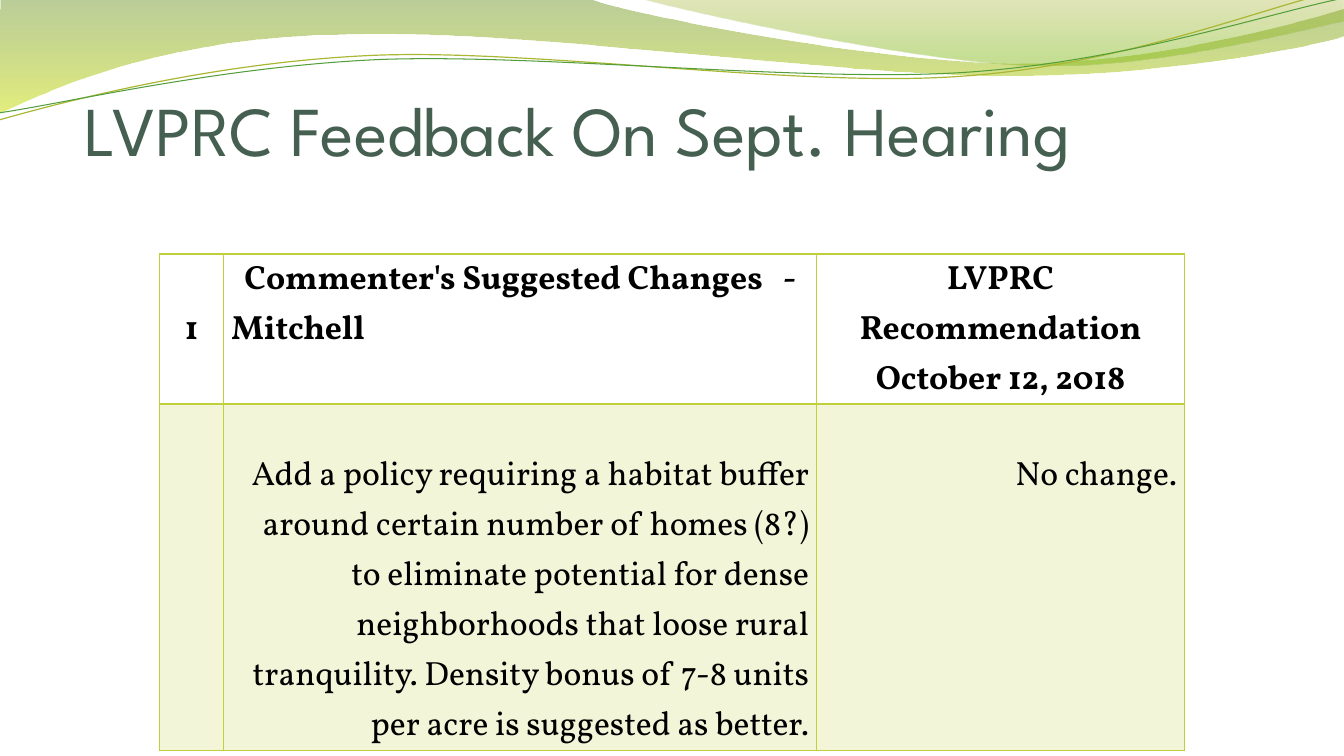
from lxml import etree
from pptx import Presentation
from pptx.dml.color import RGBColor
from pptx.enum.text import MSO_ANCHOR, MSO_AUTO_SIZE, PP_ALIGN
from pptx.oxml.ns import qn
from pptx.util import Pt

LEFT, CENTER, RIGHT = PP_ALIGN.LEFT, PP_ALIGN.CENTER, PP_ALIGN.RIGHT
TOP, MIDDLE, BOTTOM = MSO_ANCHOR.TOP, MSO_ANCHOR.MIDDLE, MSO_ANCHOR.BOTTOM
NO_AUTOFIT = MSO_AUTO_SIZE.NONE

BLACK = RGBColor(0x00, 0x00, 0x00)
TITLE_GREEN = RGBColor(0x45, 0x5F, 0x51)
OLIVE = RGBColor(0x69, 0x92, 0x1C)
YELLOW = RGBColor(0xCC, 0xE1, 0x0F)
MUSTARD = RGBColor(0x9B, 0xAA, 0x1A)
LEAF = RGBColor(0x81, 0xBA, 0x16)
LINE_OLIVE = RGBColor(0xA9, 0xB7, 0x33)
LINE_GREEN = RGBColor(0x54, 0x9E, 0x39)
TABLE_LIME = RGBColor(0xC0, 0xCF, 0x3A)


def add_wave(shapes, start, segments, closed):
    """Draw an outline in points; two numbers make a line, six a Bezier curve."""
    points = [(Pt(x), Pt(y)) for segment in segments
              for x, y in zip(segment[::2], segment[1::2])]
    builder = shapes.build_freeform(Pt(start[0]), Pt(start[1]))
    builder.add_line_segments(points, close=closed)
    wave = builder.convert_to_shape()
    wave.shadow.inherit = False
    steps = iter(list(wave._element.iter(qn("a:lnTo"))))
    for segment in segments:
        first = next(steps)
        if len(segment) == 6:
            first.tag_holder = None
            curve = etree.Element(qn("a:cubicBezTo"))
            first.addprevious(curve)
            for step in (first, next(steps), next(steps)):
                curve.append(step[0])
                step.getparent().remove(step)
    return wave


def set_opacity(fill_element, percent):
    color = fill_element.find(qn("a:srgbClr"))
    etree.SubElement(color, qn("a:alpha"), val=str(percent * 1000))


prs = Presentation()
prs.slide_width, prs.slide_height = Pt(960), Pt(540)
slide = prs.slides.add_slide(prs.slide_layouts[5])
shapes = slide.shapes

# Wave bands: start, segments, gradient stops (position, colour, opacity)
bands = [
    ((0, 0),
     [(422.6, -0.3), (456.5, 12.2, 636.5, 45.4, 727.9, 45.4),
      (818.6, 45.4, 919.4, 18.7, 959.8, 6.5), (960.5, 25.9),
      (943.9, 31.7, 834.5, 54.7, 715.7, 54.4), (596.9, 54, 366.5, 20.2, 247, 24.8),
      (123.8, 25.9, 43.9, 59.8, -1.4, 81.4)],
     [(0, OLIVE, 45), (1, YELLOW, 55)]),
    ((459.4, -0.5),
     [(488.9, 7.9, 654.5, 44.6, 738, 46.8), (820.8, 49.7, 923, 23, 959.8, 15.1),
      (959.8, 0)],
     [(0, MUSTARD, 30), (0.8, LEAF, 45)]),
]
for start, segments, stops in bands:
    band = add_wave(shapes, start, segments, True)
    band.line.fill.background()
    band.fill.gradient()
    band.fill.gradient_angle = 270
    for stop, (position, color, opacity) in zip(band.fill.gradient_stops, stops):
        stop.position = position
        stop.color.rgb = color
    for stop_element, (position, color, opacity) in zip(band._element.iter(qn("a:gs")), stops):
        set_opacity(stop_element, opacity)

# Thin wave lines: start, segments, colour, width
strands = [
    ((-0.7, 85.7),
     [(45.4, 72.7, 151.2, 44.6, 265.7, 39.6), (379.4, 34.6, 568.1, 62.6, 683.3, 54.7),
      (799.2, 47.5, 900.7, 5.8, 957.6, -7.2)], LINE_OLIVE, 0.85),
    ((-0.7, 80.6),
     [(44.6, 74.2, 157, 47.5, 271.4, 42.5), (386.6, 38.2, 573.1, 59, 687.6, 51.8),
      (802.1, 44.6, 903.6, 10.1, 959.8, -1.4)], LINE_GREEN, 0.75),
]
for start, segments, color, width in strands:
    strand = add_wave(shapes, start, segments, False)
    strand.fill.background()
    strand.line.color.rgb = color
    strand.line.width = Pt(width)

# Title, in front of the waves
title = shapes.title
shapes._spTree.append(title._element)
title.left, title.top, title.width, title.height = Pt(60), Pt(31.7), Pt(864), Pt(90)
frame = title.text_frame
frame.text = "LVPRC Feedback On Sept. Hearing"
frame_format = {"margin_left": 0, "margin_top": Pt(3.6), "margin_right": 0, "margin_bottom": 0,
                "vertical_anchor": BOTTOM, "word_wrap": True, "auto_size": NO_AUTOFIT}
for key, value in frame_format.items():
    setattr(frame, key, value)
frame.paragraphs[0].alignment = LEFT
title_font = frame.paragraphs[0].runs[0].font
title_font.name, title_font.size = "League Spartan", Pt(50)
title_font.color.rgb = TITLE_GREEN

# Feedback table; each cell: top margin, anchor, alignment, first-line indent, text
rows = [
    [(36, TOP, CENTER, 0, "1"),
     (0, TOP, LEFT, 9.3, "Commenter's Suggested Changes   - Mitchell"),
     (0, MIDDLE, CENTER, 0, "LVPRC Recommendation October 12, 2018")],
    [(0, TOP, LEFT, 0, ""),
     (33, TOP, RIGHT, 0,
      "Add a policy requiring a habitat buffer around certain number of homes (8?) "
      "to eliminate potential for dense neighborhoods that loose rural tranquility. "
      "Density bonus of 7-8 units per acre is suggested as better."),
     (33, TOP, RIGHT, 0, "No change.")],
]
column_widths = [46.1, 423.4, 262.8]
row_heights = [107, 247.5]
feedback = shapes.add_table(2, 3, Pt(113.8), Pt(181.4),
                            Pt(sum(column_widths)), Pt(sum(row_heights))).table
feedback.horz_banding = False
for column, width in zip(feedback.columns, column_widths):
    column.width = Pt(width)
for row, height in zip(feedback.rows, row_heights):
    row.height = Pt(height)

for r, row in enumerate(rows):
    is_header = r == 0
    for c, (top_margin, anchor, alignment, indent, text) in enumerate(row):
        cell = feedback.cell(r, c)
        cell.margin_left = cell.margin_right = Pt(5.4)
        cell.margin_top, cell.margin_bottom = Pt(top_margin), 0
        cell.vertical_anchor = anchor
        cell_properties = cell._tc.get_or_add_tcPr()
        for side in ("lnL", "lnR", "lnT", "lnB"):
            width = 2 if is_header and side == "lnB" else 1
            border = etree.SubElement(cell_properties, qn("a:" + side), w=str(Pt(width)))
            border_fill = etree.SubElement(border, qn("a:solidFill"))
            etree.SubElement(border_fill, qn("a:srgbClr"), val=str(TABLE_LIME))
        if is_header:
            cell.fill.background()
        else:
            cell.fill.solid()
            cell.fill.fore_color.rgb = TABLE_LIME
            set_opacity(cell_properties.find(qn("a:solidFill")), 20)
        if not text:
            continue
        paragraph = cell.text_frame.paragraphs[0]
        paragraph.alignment, paragraph.line_spacing = alignment, 1.07
        if indent:
            paragraph._p.get_or_add_pPr().set("indent", str(Pt(indent)))
        run = paragraph.add_run()
        run.text = text
        run.font.name, run.font.size, run.font.bold = "Vollkorn", Pt(24), is_header
        run.font.color.rgb = BLACK

prs.save("out.pptx")
